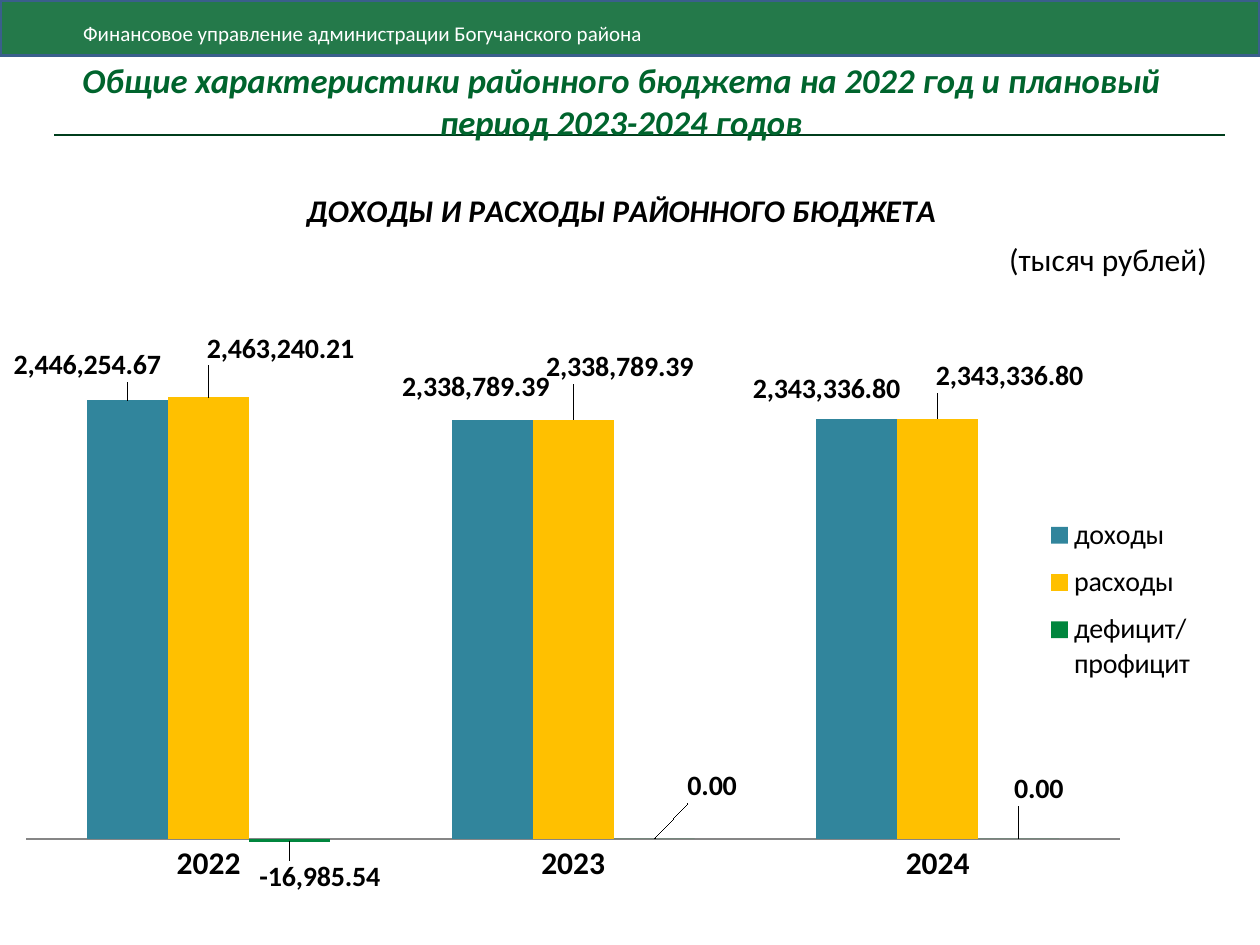
import pptx
import pptx.util
import pptx.chart.data
import pptx.dml.color
import pptx.enum.chart
import pptx.enum.shapes
import pptx.enum.text
import pptx.oxml
import pptx.oxml.ns
from pptx.util import Inches

FONT = "Calibri"
COLORS = {
    "green": "00642D", "edge": "3A5F8C", "rule": "003E1C", "white": "FFFFFF",
    "black": "000000", "axis": "868686",
}
OFFICE = "Финансовое управление администрации Богучанского района"
HEADING = "Общие характеристики районного бюджета на 2022 год и плановый период 2023-2024 годов"
CHART_TITLE = "ДОХОДЫ И РАСХОДЫ РАЙОННОГО БЮДЖЕТА"
UNITS = "(тысяч рублей)"
YEARS = ["2022", "2023", "2024"]
SERIES = [
    {"name": "доходы", "color": "31859C", "values": [2446254.67, 2338789.39, 2343336.8],
     "shifts": [(-0.32, -0.10), (-0.13, -0.08), (-0.24, -0.06)]},
    {"name": "расходы", "color": "FFC000", "values": [2463240.21, 2338789.39, 2343336.8],
     "shifts": [(0.57, -0.21), (0.37, -0.24), (0.57, -0.16)]},
    {"name": "дефицит/профицит", "color": "00863D", "values": [-16985.54, 0, 0],
     "shifts": [(0.24, 0.11), (0.46, -0.24), (0.16, -0.22)]},
]
CHART_BOX = (0, 1.39, 10.43, 6.11)
PLOT_BOX = (0.21, 1.0, 8.68, 4.98)
LEGEND_BOX = (8.22, 2.62, 1.35, 1.5)
TITLE_SPOT = (2.39, 0.06)


def rgb(code):
    return pptx.dml.color.RGBColor.from_string(code)


def style(font, size, color, bold=False, italic=False):
    font.name = FONT
    font.size = pptx.util.Pt(size)
    font.bold = bold
    font.italic = italic
    font.color.rgb = rgb(color)


def element(tag, **attributes):
    node = pptx.oxml.parse_xml(f"<{tag} {pptx.oxml.ns.nsdecls(tag.split(':')[0])}/>")
    for name, value in attributes.items():
        node.set(name, str(value))
    return node


def place(parent, index, spot, inner=False, edge=True):
    for old in parent.findall(pptx.oxml.ns.qn("c:layout")):
        parent.remove(old)
    layout, manual = element("c:layout"), element("c:manualLayout")
    layout.append(manual)
    if inner:
        manual.append(element("c:layoutTarget", val="inner"))
    if edge:
        for mode in ("c:xMode", "c:yMode"):
            manual.append(element(mode, val="edge"))
    for tag, length, whole in zip("xywh", spot, CHART_BOX[2:] * 2):
        manual.append(element(f"c:{tag}", val=round(length / whole, 4)))
    parent.insert(index, layout)


def add_header(page):
    band = page.shapes.add_shape(
        pptx.enum.shapes.MSO_SHAPE.RECTANGLE, 0, 0, Inches(10), Inches(0.44))
    band.shadow.inherit = False
    band.fill.solid()
    band.fill.fore_color.rgb = rgb(COLORS["green"])
    fill_color = band.element.spPr.find(".//" + pptx.oxml.ns.qn("a:srgbClr"))
    fill_color.append(element("a:alpha", val=86000))
    band.line.color.rgb = rgb(COLORS["edge"])
    band.line.width = pptx.util.Pt(2)
    frame = band.text_frame
    frame.margin_left, frame.margin_top, frame.margin_bottom = Inches(0.66), Inches(0.08), 0
    frame.vertical_anchor = pptx.enum.text.MSO_ANCHOR.MIDDLE
    para = frame.paragraphs[0]
    para.text = OFFICE
    para.alignment = pptx.enum.text.PP_ALIGN.LEFT
    style(para.font, 12, COLORS["white"])

    rule = page.shapes.add_connector(
        pptx.enum.shapes.MSO_CONNECTOR.STRAIGHT,
        Inches(0.43), Inches(1.07), Inches(9.72), Inches(1.07))
    rule.line.color.rgb = rgb(COLORS["rule"])
    rule.line.width = pptx.util.Pt(1.25)
    rule.element.spPr.append(element("a:effectLst"))


def add_heading(page):
    heading = page.shapes.title
    heading.left, heading.top = Inches(0.43), Inches(0.44)
    heading.width, heading.height = Inches(9), Inches(0.72)
    heading.text_frame.vertical_anchor = pptx.enum.text.MSO_ANCHOR.MIDDLE
    para = heading.text_frame.paragraphs[0]
    para.text = HEADING
    para.alignment = pptx.enum.text.PP_ALIGN.CENTER
    style(para.font, 19.8, COLORS["green"], bold=True, italic=True)
    page.shapes.element.append(heading.element)


def add_budget_chart(page):
    data = pptx.chart.data.CategoryChartData(number_format="#,##0.00")
    data.categories = YEARS
    for item in SERIES:
        data.add_series(item["name"], item["values"])
    chart = page.shapes.add_chart(
        pptx.enum.chart.XL_CHART_TYPE.COLUMN_CLUSTERED,
        *[Inches(length) for length in CHART_BOX], data).chart
    style(chart.font, 18, COLORS["black"])

    title = chart.chart_title
    para = title.text_frame.paragraphs[0]
    para.text = CHART_TITLE
    style(para.font, 18, COLORS["black"], bold=True, italic=True)
    place(title._element, 1, TITLE_SPOT)

    chart.has_legend = True
    legend = chart.legend
    legend.position = pptx.enum.chart.XL_LEGEND_POSITION.RIGHT
    legend.include_in_layout = False
    style(legend.font, 16, COLORS["black"])
    place(legend._element, 1, LEGEND_BOX)

    values = chart.value_axis
    values.minimum_scale, values.maximum_scale = -500000, 3000000
    values.has_major_gridlines = False
    values.visible = False
    years = chart.category_axis
    years.major_tick_mark = pptx.enum.chart.XL_TICK_MARK.NONE
    years.format.line.color.rgb = rgb(COLORS["axis"])
    style(years.tick_labels.font, 18, COLORS["black"], bold=True)

    plot = chart.plots[0]
    plot.gap_width, plot.overlap = 150, 0
    plot.vary_by_categories = False
    place(plot._element.getparent(), 0, PLOT_BOX, inner=True)
    for series, item in zip(plot.series, SERIES):
        series.invert_if_negative = False
        series.format.fill.solid()
        series.format.fill.fore_color.rgb = rgb(item["color"])
        labels = series.data_labels
        labels.show_value = True
        labels.number_format = "#,##0.00"
        labels.number_format_is_linked = False
        style(labels.font, 16, COLORS["black"], bold=True)
        for index, shift in enumerate(item["shifts"]):
            label = series.points[index].data_label
            label.position = pptx.enum.chart.XL_LABEL_POSITION.OUTSIDE_END
            style(label.font, 16, COLORS["black"], bold=True)
        for node, shift in zip(series._element.iter(pptx.oxml.ns.qn("c:dLbl")), item["shifts"]):
            place(node, 1, shift, edge=False)


def add_units(page):
    box = page.shapes.add_textbox(Inches(7.91), Inches(1.86), Inches(1.89), Inches(0.4))
    box.text_frame.word_wrap = True
    para = box.text_frame.paragraphs[0]
    para.text = UNITS
    style(para.font, 18, COLORS["black"])


def main():
    deck = pptx.Presentation()
    deck.slide_width, deck.slide_height = Inches(10), Inches(7.5)
    page = deck.slides.add_slide(deck.slide_layouts[5])
    add_header(page)
    add_heading(page)
    add_budget_chart(page)
    add_units(page)
    deck.save("out.pptx")


if __name__ == "__main__":
    main()
